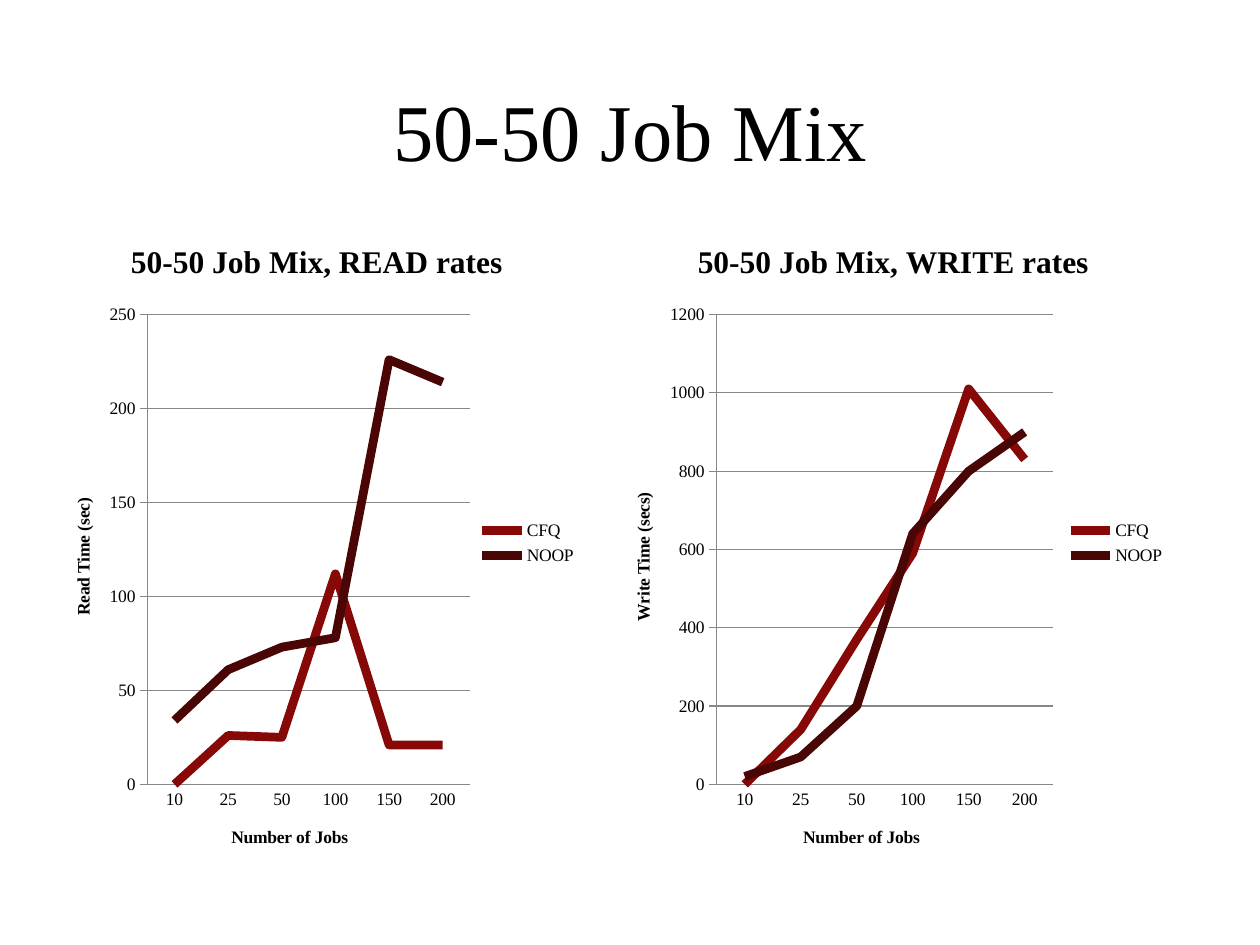
"""Build a slide that compares read and write times of a 50-50 job mix."""
from pptx import Presentation
from pptx import util as u
from pptx.chart.data import CategoryChartData
from pptx.dml.color import RGBColor
from pptx.enum import chart as charts, text
from pptx.oxml import parse_xml
from pptx.oxml.ns import nsdecls, qn

FONT = "Times New Roman"
COLORS = {"text": "000000", "grid": "878787", "CFQ": "860908", "NOOP": "4A0505"}
JOBS = ["10", "25", "50", "100", "150", "200"]
PLOT_AREA = {"x": 0.19, "y": 0.15, "w": 0.59, "h": 0.72}


def color(name):
    return RGBColor.from_string(COLORS[name])


def format_font(font, size, bold=False):
    font.name = FONT
    font.size = u.Pt(size)
    font.bold = bold
    font.color.rgb = color("text")


def write_text(frame, content, size, bold=False, align=None):
    frame.text = content
    paragraph = frame.paragraphs[0]
    paragraph.alignment = align
    format_font(paragraph.runs[0].font, size, bold)


def format_line(line, name, width):
    line.color.rgb = color(name)
    line.width = u.Pt(width)


def format_axis(axis, title, tick_mark):
    write_text(axis.axis_title.text_frame, title, size=10, bold=True)
    axis.major_tick_mark = tick_mark
    axis.minor_tick_mark = charts.XL_TICK_MARK.NONE
    format_font(axis.tick_labels.font, 10)
    format_line(axis.format.line, "grid", 0.75)


def place_plot_area(chart):
    plot_area = chart.element.find(".//" + qn("c:plotArea"))
    for layout in plot_area.findall(qn("c:layout")):
        plot_area.remove(layout)
    sizes = "".join(f'<c:{key} val="{value}"/>' for key, value in PLOT_AREA.items())
    plot_area.insert(0, parse_xml(
        f'<c:layout {nsdecls("c")}><c:manualLayout><c:layoutTarget val="inner"/>'
        f'<c:xMode val="edge"/><c:yMode val="edge"/>{sizes}'
        '</c:manualLayout></c:layout>'))


def add_line_chart(slide, left, width, title, value_title, top_value, step, times):
    data = CategoryChartData()
    data.categories = JOBS
    for name, values in times.items():
        data.add_series(name, values)
    chart = slide.shapes.add_chart(
        charts.XL_CHART_TYPE.LINE, u.Inches(left), u.Inches(1.72),
        u.Inches(width), u.Inches(5.18), data).chart
    format_font(chart.font, 10)
    write_text(chart.chart_title.text_frame, title, size=18, bold=True)
    chart.chart_title.include_in_layout = False
    chart.has_legend = True
    chart.legend.position = charts.XL_LEGEND_POSITION.RIGHT
    chart.legend.include_in_layout = False
    format_font(chart.legend.font, 10)
    format_axis(chart.category_axis, "Number of Jobs", charts.XL_TICK_MARK.NONE)
    format_axis(chart.value_axis, value_title, charts.XL_TICK_MARK.OUTSIDE)
    chart.value_axis.minimum_scale = 0
    chart.value_axis.maximum_scale = top_value
    chart.value_axis.major_unit = step
    format_line(chart.value_axis.major_gridlines.format.line, "grid", 0.75)
    plot = chart.plots[0]
    plot.vary_by_categories = False
    for series in plot.series:
        series.smooth = False
        series.marker.style = charts.XL_MARKER_STYLE.NONE
        format_line(series.format.line, series.name, 5)
    place_plot_area(chart)


def add_title(slide, content):
    title = slide.shapes.title
    title.left, title.top = u.Inches(1), u.Inches(0.55)
    title.width, title.height = u.Inches(8), u.Inches(0.95)
    title.text_frame.vertical_anchor = text.MSO_ANCHOR.MIDDLE
    write_text(title.text_frame, content, size=46, align=text.PP_ALIGN.CENTER)


def main():
    presentation = Presentation()
    presentation.slide_width = u.Inches(10)
    presentation.slide_height = u.Inches(7.5)
    slide = presentation.slides.add_slide(presentation.slide_layouts[5])
    add_title(slide, "50-50 Job Mix")
    add_line_chart(
        slide, 0.35, 4.33, "50-50 Job Mix, READ rates", "Read Time (sec)", 250, 50,
        {"CFQ": [0, 26, 25, 112, 21, 21], "NOOP": [34, 61, 73, 78, 226, 214]})
    add_line_chart(
        slide, 4.83, 4.52, "50-50 Job Mix, WRITE rates", "Write Time (secs)", 1200, 200,
        {"CFQ": [0, 140, 370, 590, 1010, 830], "NOOP": [20, 70, 200, 640, 800, 900]})
    presentation.save("out.pptx")


if __name__ == "__main__":
    main()
